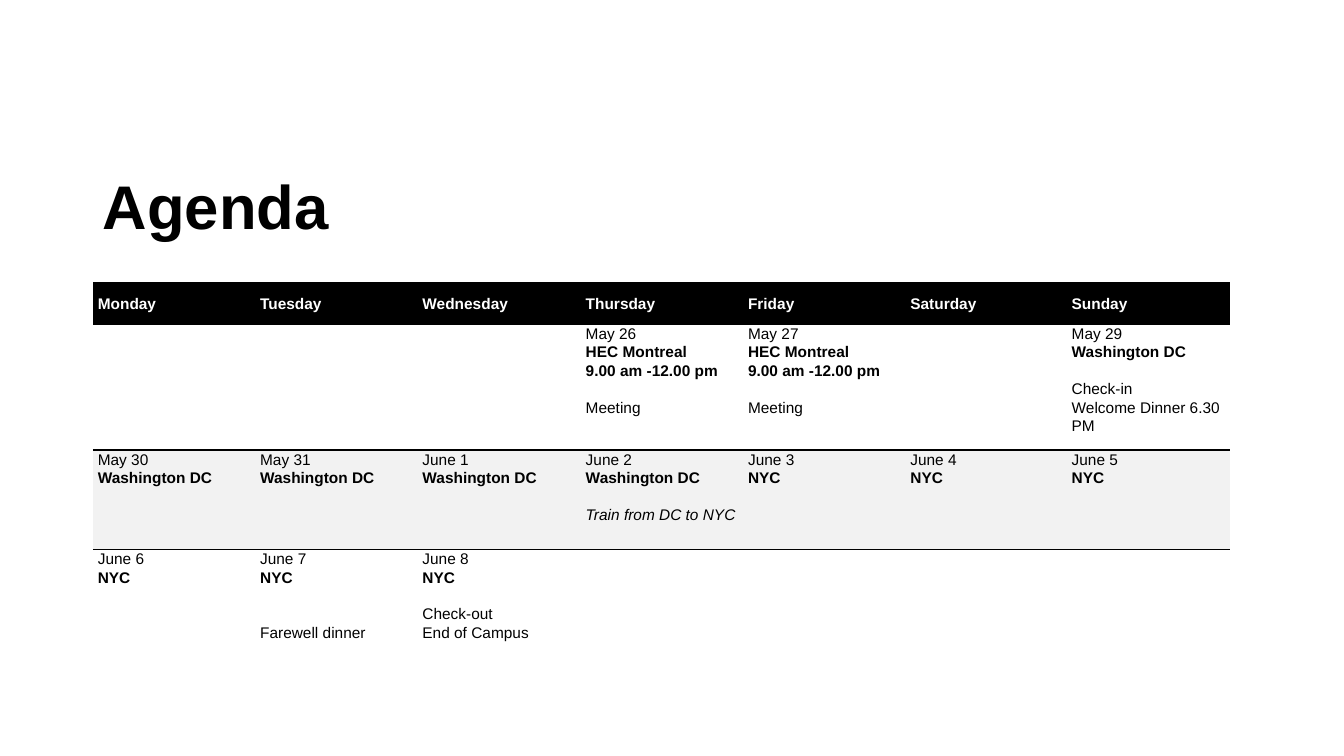
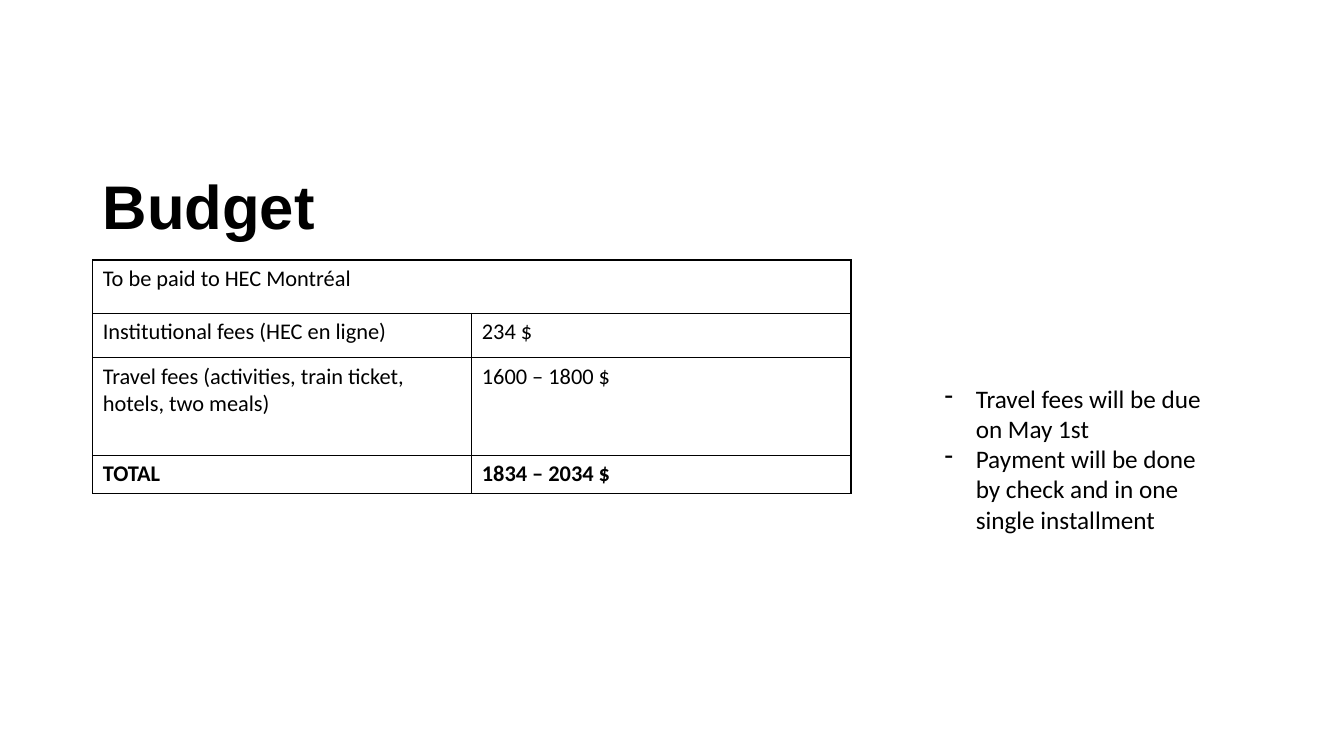
from lxml import etree
from pptx import Presentation
from pptx.dml.color import RGBColor
from pptx.enum.text import MSO_ANCHOR as Anchor, MSO_AUTO_SIZE as AutoSize
from pptx.oxml.ns import qn
from pptx.util import Inches, Pt

# Shared look
BLACK, WHITE, GREY = "000000", "FFFFFF", "F2F2F2"
LEFT = 0.92
AGENDA_TEXT = dict(size=11, font="Arial", line=1.07)
BUDGET_TEXT = dict(size=16, font="Calibri")
NOTE_TEXT = dict(size=18, font="Calibri", dash_indent=0.31)
BLANK_LINE = 13.2  # points, height of one agenda line
NO_STYLE = "{2D5ABB26-0587-4C30-8999-92F81FD0307C}"

# Agenda: each day is (date, bold lines, notes, lines skipped before the notes)
DAYS = ["Monday", "Tuesday", "Wednesday", "Thursday", "Friday", "Saturday", "Sunday"]
MEETING = (["HEC Montreal", "9.00 am -12.00 pm"], ["Meeting"], 1)
DC, NYC = ["Washington DC"], ["NYC"]
WEEKS = [
    [None, None, None, ("May 26", *MEETING), ("May 27", *MEETING), None,
     ("May 29", DC, ["Check-in", "Welcome Dinner 6.30 PM"], 1)],
    [("May 30", DC, [], 0), ("May 31", DC, [], 0), ("June 1", DC, [], 0),
     ("June 2", DC, ["Train from DC to NYC"], 1),
     ("June 3", NYC, [], 0), ("June 4", NYC, [], 0), ("June 5", NYC, [], 0)],
    [("June 6", NYC, [], 0), ("June 7", NYC, ["Farewell dinner"], 2),
     ("June 8", NYC, ["Check-out", "End of Campus"], 1), None, None, None, None],
]
ITALIC_NOTES = {"Train from DC to NYC"}

BUDGET = [
    ("To be paid to HEC Montréal", ""),
    ("Institutional fees (HEC en ligne)", "234 $"),
    ("Travel fees (activities, train ticket, hotels, two meals)", "1600 – 1800 $"),
    ("TOTAL", "1834 – 2034 $"),
]
PAYMENT_NOTES = [
    "Travel fees will be due on May 1st",
    "Payment will be done by check and in one single installment",
]


def color(value):
    return RGBColor.from_string(value)


def add_text(frame, text, size, font, fill=BLACK, bold=False, italic=False,
             line=None, before=0, dash_indent=None):
    """Add one paragraph, using the empty first one if it is free."""
    para = frame.paragraphs[0]
    if para.runs:
        para = frame.add_paragraph()
    if dash_indent:
        props = para._p.get_or_add_pPr()
        props.set("marL", str(Inches(dash_indent)))
        props.set("indent", str(-Inches(dash_indent)))
        etree.SubElement(props, qn("a:buChar"), char="-")
    if line:
        para.line_spacing = line
    if before:
        para.space_before = Pt(before)
    span = para.add_run()
    span.text = text
    span.font.size, span.font.name = Pt(size), font
    span.font.bold, span.font.italic = bold, italic
    span.font.color.rgb = color(fill)


def add_box(page, left, top, width, height, anchor=Anchor.TOP):
    box = page.shapes.add_textbox(*map(Inches, (left, top, width, height)))
    box.text_frame.word_wrap = True
    box.text_frame.vertical_anchor = anchor
    return box.text_frame


def add_page(deck, title):
    page = deck.slides.add_slide(deck.slide_layouts[6])
    frame = add_box(page, LEFT, 1.35, 11.5, 1.45, Anchor.MIDDLE)
    add_text(frame, title, size=44, font="Arial", bold=True, line=0.9)
    return page


def add_grid(page, top, widths, heights):
    """Add an unstyled table sized by its columns and rows."""
    frame = page.shapes.add_table(
        len(heights), len(widths), Inches(LEFT), Inches(top),
        Inches(sum(widths)), Inches(sum(heights)))
    table = frame.table
    table._tbl.tblPr.find(qn("a:tableStyleId")).text = NO_STYLE
    table.horz_banding = False
    for column, width in zip(table.columns, widths):
        column.width = Inches(width)
    for row, height in zip(table.rows, heights):
        row.height = Inches(height)
    return table


def style_cell(cell, fill=None, borders="", insets=None, anchor=Anchor.TOP):
    """Borders name sides from L, R, T, B in that order."""
    props = cell._tc.get_or_add_tcPr()
    for side in borders:
        edge = etree.SubElement(props, qn("a:ln" + side), w=str(Pt(1)))
        solid = etree.SubElement(edge, qn("a:solidFill"))
        etree.SubElement(solid, qn("a:srgbClr"), val=BLACK)
    if fill:
        cell.fill.solid()
        cell.fill.fore_color.rgb = color(fill)
    else:
        cell.fill.background()
    if insets:
        (cell.margin_left, cell.margin_top,
         cell.margin_right, cell.margin_bottom) = map(Inches, insets)
    cell.vertical_anchor = anchor


def fill_day(frame, date, places, notes, skipped):
    add_text(frame, date, **AGENDA_TEXT)
    for place in places:
        add_text(frame, place, bold=True, **AGENDA_TEXT)
    for index, note in enumerate(notes):
        add_text(frame, note, italic=note in ITALIC_NOTES,
                 before=0 if index else skipped * BLANK_LINE, **AGENDA_TEXT)


def build_agenda(deck):
    page = add_page(deck, "Agenda")
    table = add_grid(page, 2.8, [1.61, 1.61, 1.62, 1.61, 1.61, 1.6, 1.62],
                     [0.42, 1.24, 0.99, 1.05])
    # Weekday header
    for column, day in enumerate(DAYS):
        cell = table.cell(0, column)
        style_cell(cell, BLACK, insets=(0.05, 0.08, 0.04, 0.08), anchor=Anchor.MIDDLE)
        add_text(cell.text_frame, day, fill=WHITE, bold=True, **AGENDA_TEXT)
    # Weeks, with a rule below the first
    looks = [(None, "B"), (GREY, "T"), (None, "")]
    for row, (week, (fill, borders)) in enumerate(zip(WEEKS, looks), start=1):
        for column, day in enumerate(week):
            cell = table.cell(row, column)
            style_cell(cell, fill, borders, insets=(0.05, 0, 0.04, 0.08))
            if day:
                fill_day(cell.text_frame, *day)


def build_budget(deck):
    page = add_page(deck, "Budget")
    # Fees
    table = add_grid(page, 2.58, [3.76, 3.76], [0.53, 0.44, 0.97, 0.38])
    table.cell(0, 0).merge(table.cell(0, 1))
    for row, texts in enumerate(BUDGET):
        for column, text in enumerate(texts):
            cell = table.cell(row, column)
            style_cell(cell, borders="LRTB")
            if text:
                add_text(cell.text_frame, text, bold=row == len(BUDGET) - 1, **BUDGET_TEXT)
    # Payment notes
    frame = add_box(page, 9.27, 3.75, 2.83, 1.62)
    frame.auto_size = AutoSize.SHAPE_TO_FIT_TEXT
    for note in PAYMENT_NOTES:
        add_text(frame, note, **NOTE_TEXT)


def main():
    deck = Presentation()
    deck.slide_width, deck.slide_height = Inches(13.33), Inches(7.5)
    build_agenda(deck)
    build_budget(deck)
    deck.save("out.pptx")


if __name__ == "__main__":
    main()
